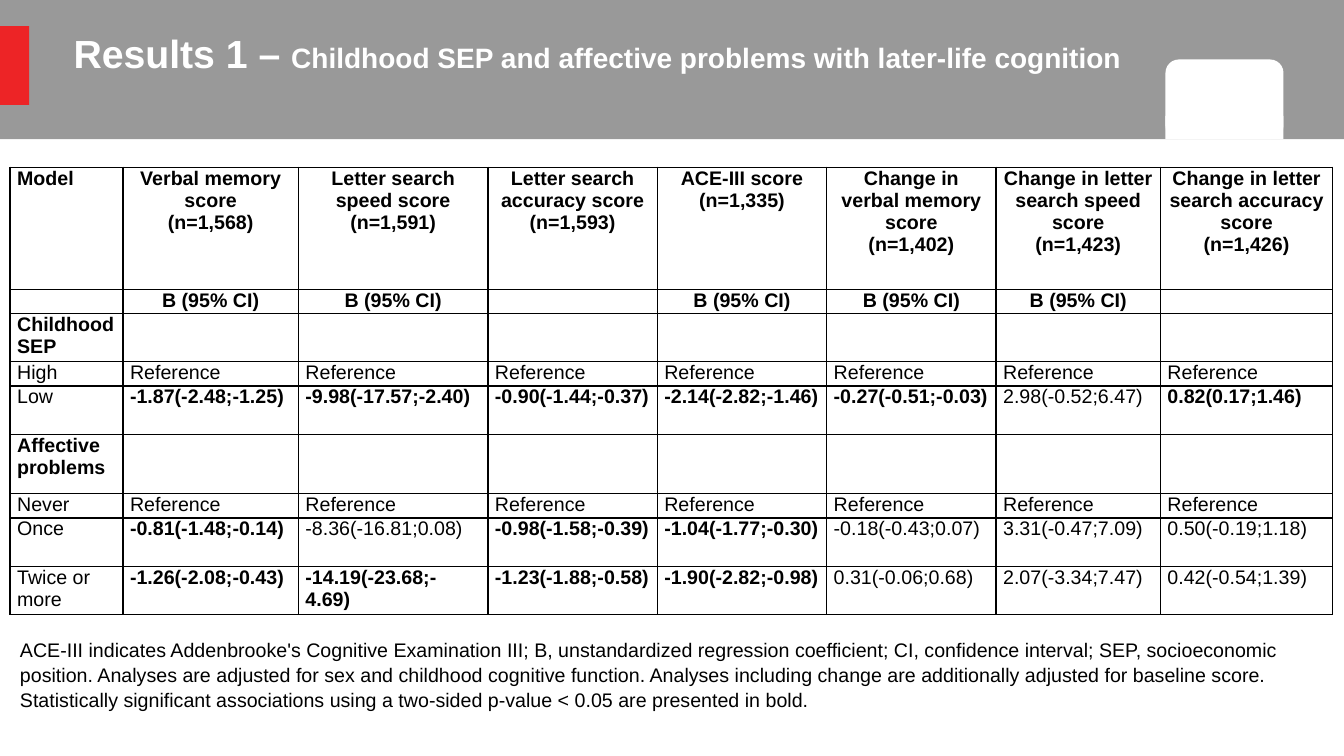
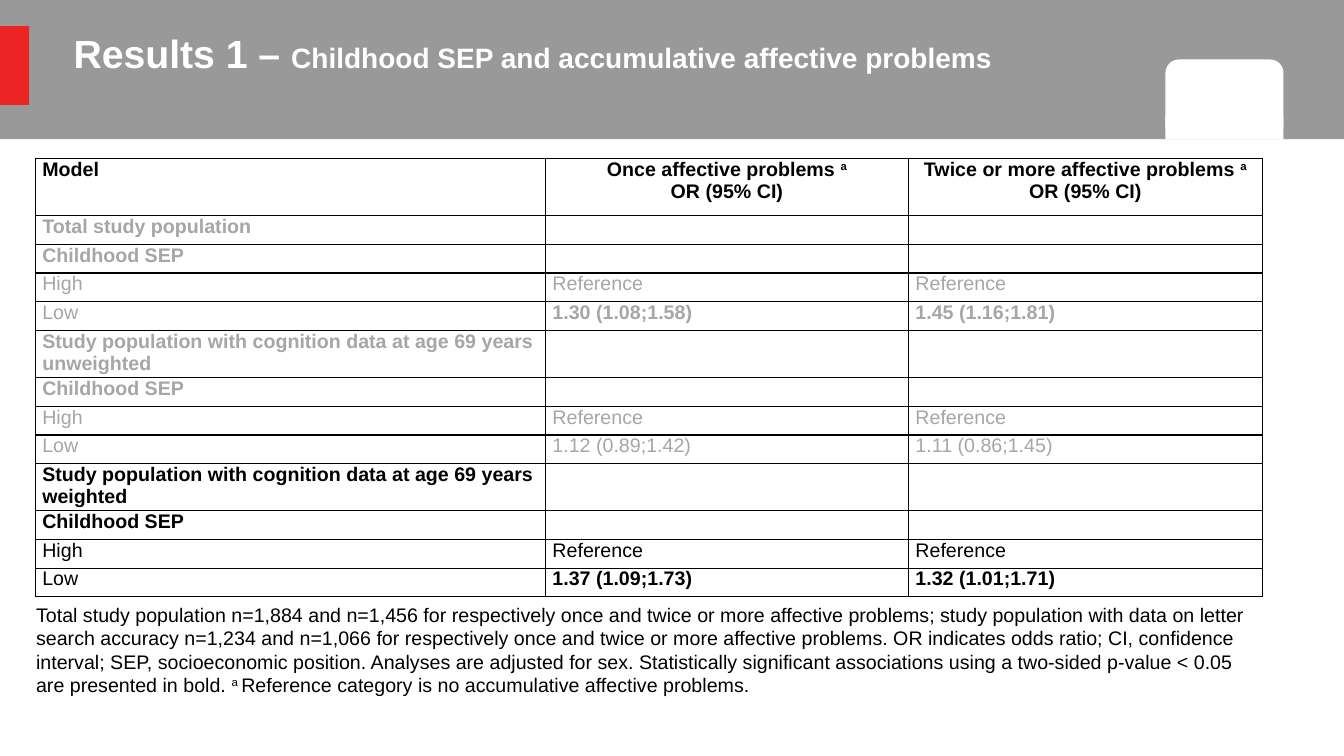
from dataclasses import dataclass

from lxml import etree
from pptx import Presentation
from pptx.dml.color import RGBColor
from pptx.enum.shapes import MSO_SHAPE
from pptx.enum.text import PP_ALIGN
from pptx.oxml.ns import qn
from pptx.util import Inches, Pt

RECT, ROUND = MSO_SHAPE.RECTANGLE, MSO_SHAPE.ROUNDED_RECTANGLE
LEFT, MID = PP_ALIGN.LEFT, PP_ALIGN.CENTER


@dataclass(frozen=True)
class Theme:
    font: str = "Arial"
    head: int = 28
    sub: int = 20
    body: int = 14
    band: str = "808080"
    red: str = "ED2426"
    white: str = "FFFFFF"
    ink: str = "000000"
    dim: str = "A6A6A6"


class Deck:
    def __init__(self, theme):
        self.theme = theme
        self.prs = Presentation()
        self.prs.slide_width, self.prs.slide_height = Inches(13.33), Inches(7.5)
        self.slide = None

    def start(self, topic, width):
        """Add a slide with the shared band, marks and title."""
        t = self.theme
        self.slide = self.prs.slides.add_slide(self.prs.slide_layouts[6])
        self.block(RECT, t.band, 0, 0, 13.33, 1.38, alpha=80)
        self.block(RECT, t.red, -0.01, 0.26, 0.3, 0.78)
        # White tab: round on top, square at the foot
        self.block(ROUND, t.white, 11.56, 0.59, 1.17, 0.79)
        self.block(RECT, t.white, 11.56, 1.15, 1.17, 0.23)
        frame = self.box(0.73, 0.29, width, 1.08)
        frame.margin_left = frame.margin_right = 0
        frame.margin_top = frame.margin_bottom = 0
        par = frame.paragraphs[0]
        self.run(par, "Results 1 – ", t.head, t.white, True)
        self.run(par, topic, t.sub, t.white, True)

    def block(self, kind, color, x, y, w, h, alpha=None):
        shape = self.slide.shapes.add_shape(
            kind, Inches(x), Inches(y), Inches(w), Inches(h))
        shape.shadow.inherit = False
        shape.line.fill.background()
        shape.fill.solid()
        shape.fill.fore_color.rgb = RGBColor.from_string(color)
        if alpha:
            tint = shape.element.spPr.find(".//" + qn("a:srgbClr"))
            etree.SubElement(tint, qn("a:alpha"), val=str(alpha * 1000))

    def box(self, x, y, w, h):
        frame = self.slide.shapes.add_textbox(
            Inches(x), Inches(y), Inches(w), Inches(h)).text_frame
        frame.word_wrap = True
        return frame

    def run(self, par, text, size, color, bold=False, high=False):
        run = par.add_run()
        run.text = text
        run.font.name = self.theme.font
        run.font.size = Pt(size)
        run.font.bold = bold
        run.font.color.rgb = RGBColor.from_string(color)
        if high:
            run.font._element.set("baseline", "30000")

    def rich(self, par, text, color, bold=False):
        """Write body text; parts between carets are superscript."""
        for i, part in enumerate(text.split("^")):
            if part:
                self.run(par, part, self.theme.body, color, bold, i % 2 == 1)

    def note(self, text, x, y, w, h, gap=1.0):
        par = self.box(x, y, w, h).paragraphs[0]
        par.line_spacing = gap
        self.rich(par, text, self.theme.ink)

    def table(self, x, y, cols, tall, rows, heads, dim=()):
        """Fill a ruled grid; a leading star makes a cell bold."""
        grid = self.slide.shapes.add_table(
            len(rows), len(cols), Inches(x), Inches(y),
            Inches(sum(cols)), Inches(sum(tall))).table
        grid.first_row = grid.horz_banding = False
        for col, width in zip(grid.columns, cols):
            col.width = Inches(width)
        for row, height in zip(grid.rows, tall):
            row.height = Inches(height)
        for r, row in enumerate(rows):
            color = self.theme.dim if r in dim else self.theme.ink
            for c in range(len(cols)):
                text = row[c] if c < len(row) else ""
                align = MID if c and r < heads else LEFT
                self.cell(grid.cell(r, c), text, color, align)

    def cell(self, cell, text, color, align):
        cell.margin_left = cell.margin_right = Inches(0.07)
        cell.margin_top = cell.margin_bottom = 0
        cell.fill.background()
        self.rule(cell)
        bold = text.startswith("*")
        frame = cell.text_frame
        for i, line in enumerate(text.lstrip("*").split("\n")):
            par = frame.add_paragraph() if i else frame.paragraphs[0]
            par.alignment = align
            self.rich(par, line, color, bold)
            if not line:
                # Keeps an empty cell from growing its row
                etree.SubElement(par._p, qn("a:endParaRPr"),
                                 sz=str(self.theme.body * 100))

    def rule(self, cell):
        props = cell._tc.get_or_add_tcPr()
        for i, side in enumerate(("lnL", "lnR", "lnT", "lnB")):
            line = etree.Element(qn("a:" + side), w=str(Pt(1)))
            fill = etree.SubElement(line, qn("a:solidFill"))
            etree.SubElement(fill, qn("a:srgbClr"), val=self.theme.ink)
            props.insert(i, line)


def scores(deck):
    deck.start("Childhood SEP and affective problems with later-life cognition", 10.62)
    unit, same = "*B (95% CI)", ["Reference"] * 7
    rows = [
        ["*Model", "*Verbal memory score\n(n=1,568)",
         "*Letter search speed score\n(n=1,591)",
         "*Letter search accuracy score\n(n=1,593)", "*ACE-III score\n(n=1,335)",
         "*Change in verbal memory score\n(n=1,402)",
         "*Change in letter search speed score\n(n=1,423)",
         "*Change in letter search accuracy score\n(n=1,426)"],
        ["", unit, unit, "", unit, unit, unit],
        ["*Childhood SEP"],
        ["High", *same],
        ["Low", "*-1.87(-2.48;-1.25)", "*-9.98(-17.57;-2.40)",
         "*-0.90(-1.44;-0.37)", "*-2.14(-2.82;-1.46)", "*-0.27(-0.51;-0.03)",
         "2.98(-0.52;6.47)", "*0.82(0.17;1.46)"],
        ["*Affective problems"],
        ["Never", *same],
        ["Once", "*-0.81(-1.48;-0.14)", "-8.36(-16.81;0.08)",
         "*-0.98(-1.58;-0.39)", "*-1.04(-1.77;-0.30)", "-0.18(-0.43;0.07)",
         "3.31(-0.47;7.09)", "0.50(-0.19;1.18)"],
        ["Twice or more", "*-1.26(-2.08;-0.43)", "*-14.19(-23.68;-4.69)",
         "*-1.23(-1.88;-0.58)", "*-1.90(-2.82;-0.98)", "0.31(-0.06;0.68)",
         "2.07(-3.34;7.47)", "0.42(-0.54;1.39)"],
    ]
    deck.table(0.1, 1.66, [1.12, 1.74, 1.88, 1.68, 1.68, 1.68, 1.63, 1.71],
               [1.21, 0.24, 0.48, 0.24, 0.48, 0.59, 0.24, 0.48, 0.48], rows, heads=2)
    deck.note(
        "ACE-III indicates Addenbrooke's Cognitive Examination III; B, unstandardized "
        "regression coefficient; CI, confidence interval; SEP, socioeconomic position. "
        "Analyses are adjusted for sex and childhood cognitive function. Analyses "
        "including change are additionally adjusted for baseline score. Statistically "
        "significant associations using a two-sided p-value < 0.05 are presented in bold.",
        0.1, 6.26, 13.13, 0.84, gap=1.07)


def odds(deck):
    deck.start("Childhood SEP and accumulative affective problems", 10.03)
    cohort = "*Study population with cognition data at age 69 years "
    groups = [
        ("*Total study population", "*1.30 (1.08;1.58)", "*1.45 (1.16;1.81)"),
        (cohort + "unweighted", "1.12 (0.89;1.42)", "1.11 (0.86;1.45)"),
        (cohort + "weighted", "*1.37 (1.09;1.73)", "*1.32 (1.01;1.71)"),
    ]
    rows = [["*Model", "*Once affective problems ^a^\nOR (95% CI)",
             "*Twice or more affective problems ^a^\nOR (95% CI)"]]
    tall = [0.57]
    line = 2.85 / 10
    for name, once, twice in groups:
        rows += [[name], ["*Childhood SEP"],
                 ["High", "Reference", "Reference"], ["Low", once, twice]]
        tall += [0.44 if name.startswith(cohort) else line] + [line] * 3
    deck.table(0.35, 1.57, [5.06, 3.6, 3.51], tall, rows, heads=1, dim=range(1, 9))
    deck.note(
        "Total study population n=1,884 and n=1,456 for respectively once and twice or "
        "more affective problems; study population with data on letter search accuracy "
        "n=1,234 and n=1,066 for respectively once and twice or more affective problems. "
        "OR indicates odds ratio; CI, confidence interval; SEP, socioeconomic position. "
        "Analyses are adjusted for sex. Statistically significant associations using a "
        "two-sided p-value < 0.05 are presented in bold. ^a ^Reference category is no "
        "accumulative affective problems.",
        0.26, 5.93, 12.26, 1.04)


def main():
    deck = Deck(Theme())
    scores(deck)
    odds(deck)
    deck.prs.save("out.pptx")


if __name__ == "__main__":
    main()
